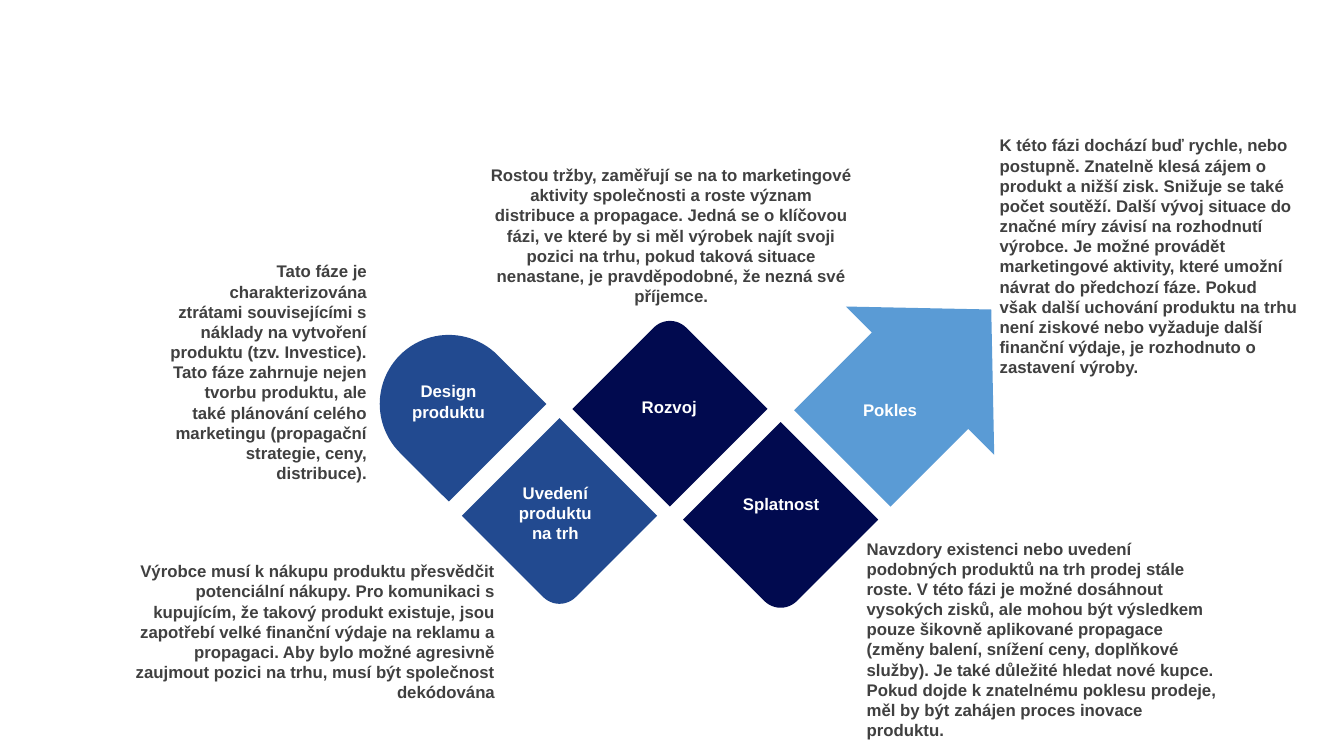
from pptx import Presentation
from pptx.dml.color import RGBColor
from pptx.enum.shapes import MSO_SHAPE as Shape
from pptx.enum.text import MSO_ANCHOR as Anchor, MSO_AUTO_SIZE as AutoSize, PP_ALIGN as Align
from pptx.util import Pt

THEME = {
    "font": "Arial", "size": 12,
    "blue": "224A90", "navy": "010A4F", "sky": "5A9BD5",
    "label": "FFFFFF", "body": "404040",
}
SLIDE_SIZE = (960, 540)
TILE_LEFT, TILE_STEP, TILE_SIZE = 271.3, 79, 98.6
LABEL_WIDTH = 72

# Square tiles: preset, top, rotation, colour, adjustments
TILES = [
    (Shape.ROUND_2_SAME_RECTANGLE, 239.2, 315, "blue", (0.5, 0)),
    (Shape.ROUND_1_RECTANGLE, 319.1, 135, "blue", ()),
    (Shape.ROUND_1_RECTANGLE, 242.8, 315, "navy", ()),
    (Shape.ROUND_1_RECTANGLE, 321.9, 135, "navy", ()),
]
ARROW_BOX = (579.6, 199.4, 150.5, 149.8)
ARROW_ADJUSTMENTS = (0.65, 0.48)

# Phase labels: text, left, top, height
LABELS = [
    ("Design produktu", 284.4, 268.6, 36),
    ("Uvedení produktu na trh", 360.7, 340.6, 51.1),
    ("Rozvoj", 442.1, 280.1, 21.6),
    ("Splatnost", 522, 349.2, 21.6),
    ("Pokles", 599.8, 282.2, 21.6),
]

# Phase descriptions: text, alignment, (left, top, width, height)
DESCRIPTIONS = [
    ("Tato fáze je charakterizována ztrátami souvisejícími s náklady na vytvoření "
     "produktu (tzv. Investice). Tato fáze zahrnuje nejen tvorbu produktu, ale také "
     "plánování celého marketingu (propagační strategie, ceny, distribuce).",
     Align.RIGHT, (113, 182.2, 156.2, 167)),
    ("Výrobce musí k nákupu produktu přesvědčit potenciální nákupy. Pro komunikaci s "
     "kupujícím, že takový produkt existuje, jsou zapotřebí velké finanční výdaje na "
     "reklamu a propagaci. Aby bylo možné agresivně zaujmout pozici na trhu, musí být "
     "společnost dekódována",
     Align.RIGHT, (77, 396.7, 283.7, 108.7)),
    ("Rostou tržby, zaměřují se na to marketingové aktivity společnosti a roste význam "
     "distribuce a propagace. Jedná se o klíčovou fázi, ve které by si měl výrobek najít "
     "svoji pozici na trhu, pokud taková situace nenastane, je pravděpodobné, že nezná "
     "své příjemce.",
     Align.CENTER, (343.4, 113.8, 272.2, 108.7)),
    ("Navzdory existenci nebo uvedení podobných produktů na trh prodej stále roste. V "
     "této fázi je možné dosáhnout vysokých zisků, ale mohou být výsledkem pouze šikovně "
     "aplikované propagace (změny balení, snížení ceny, doplňkové služby). Je také "
     "důležité hledat nové kupce. Pokud dojde k znatelnému poklesu prodeje, měl by být "
     "zahájen proces inovace produktu.",
     Align.LEFT, (612, 387.4, 268.6, 138.2)),
    ("K této fázi dochází buď rychle, nebo postupně. Znatelně klesá zájem o produkt a "
     "nižší zisk. Snižuje se také počet soutěží. Další vývoj situace do značné míry "
     "závisí na rozhodnutí výrobce. Je možné provádět marketingové aktivity, které "
     "umožní návrat do předchozí fáze. Pokud však další uchování produktu na trhu není "
     "ziskové nebo vyžaduje další finanční výdaje, je rozhodnuto o zastavení výroby.",
     Align.LEFT, (707, 92.2, 228.2, 181.4)),
]


def set_all(target, values):
    for name, value in values.items():
        setattr(target, name, value)


def add_block(slide, preset, box, rotation, color, adjustments):
    shape = slide.shapes.add_shape(preset, *map(Pt, box))
    shape.rotation = rotation
    shape.shadow.inherit = False
    shape.fill.solid()
    shape.fill.fore_color.rgb = RGBColor.from_string(THEME[color])
    shape.line.fill.background()
    for index, value in enumerate(adjustments):
        shape.adjustments[index] = value


def add_text(slide, text, align, box, color):
    frame = slide.shapes.add_textbox(*map(Pt, box)).text_frame
    set_all(frame, {"word_wrap": True, "auto_size": AutoSize.SHAPE_TO_FIT_TEXT,
                    "vertical_anchor": Anchor.MIDDLE})
    paragraph = frame.paragraphs[0]
    paragraph.alignment = align
    run = paragraph.add_run()
    run.text = text
    set_all(run.font, {"name": THEME["font"], "size": Pt(THEME["size"]), "bold": True})
    run.font.color.rgb = RGBColor.from_string(THEME[color])


def main():
    presentation = Presentation()
    presentation.slide_width, presentation.slide_height = map(Pt, SLIDE_SIZE)
    slide = presentation.slides.add_slide(presentation.slide_layouts[6])

    for index, (preset, top, rotation, color, adjustments) in enumerate(TILES):
        box = (TILE_LEFT + index * TILE_STEP, top, TILE_SIZE, TILE_SIZE)
        add_block(slide, preset, box, rotation, color, adjustments)
    add_block(slide, Shape.RIGHT_ARROW, ARROW_BOX, 315, "sky", ARROW_ADJUSTMENTS)

    for text, align, box in DESCRIPTIONS:
        add_text(slide, text, align, box, "body")
    for text, left, top, height in LABELS:
        add_text(slide, text, Align.CENTER, (left, top, LABEL_WIDTH, height), "label")

    presentation.save("out.pptx")


if __name__ == "__main__":
    main()
